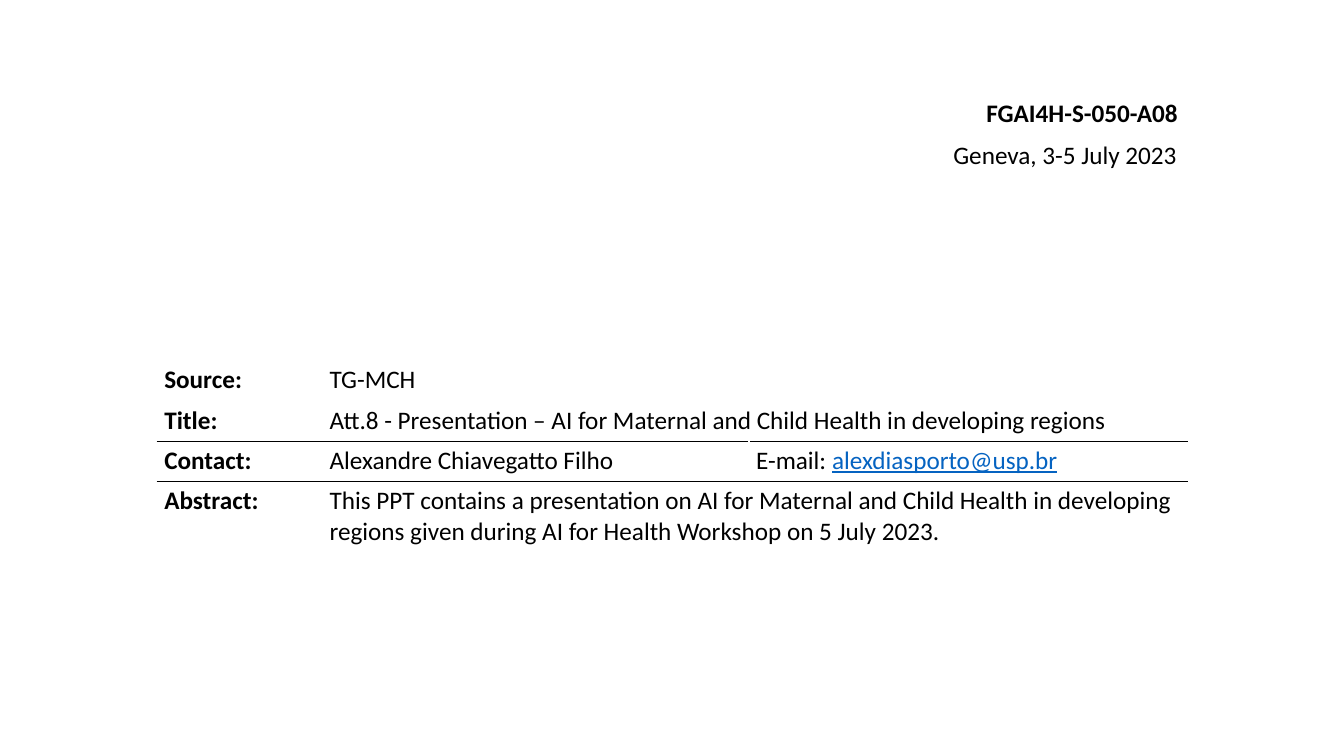
from dataclasses import dataclass

from lxml import etree
from pptx import Presentation
from pptx import util as u
from pptx.dml.color import RGBColor
from pptx.enum import text as t
from pptx.oxml import ns

BLACK, LINK = "000000", "0563C1"


@dataclass
class Run:
    text: str
    bold: bool = False
    underline: bool = False
    color: str = BLACK


@dataclass
class HeaderLine:
    left: float
    top: float
    width: float
    run: Run


@dataclass
class Row:
    label: str
    cells: list[list[Run]]
    height: float = 0.4
    rules: tuple[str, ...] = ()


HEADER = [
    HeaderLine(9.65, 0.92, 2.13, Run("FGAI4H-S-050-A08", bold=True)),
    HeaderLine(9.33, 1.33, 2.44, Run("Geneva, 3-5 July 2023")),
]
COLUMNS = [1.64, 4.23, 4.35]
ROWS = [
    Row("Source:", [[Run("TG-MCH")]]),
    Row("Title:", [[Run("Att.8 - Presentation – AI for Maternal and Child Health "
                        "in developing regions")]], rules=("lnB",)),
    Row("Contact:", [[Run("Alexandre Chiavegatto Filho")],
                     [Run("E-mail: "),
                      Run("alexdiasporto@usp.br", underline=True, color=LINK)]],
        rules=("lnT", "lnB")),
    Row("Abstract:", [[Run("This PPT contains a presentation on AI for Maternal and Child "
                           "Health in developing regions given during AI for Health "
                           "Workshop on 5 July 2023.")]], 0.68, ("lnT",)),
]


def set_color(color_format, value: str) -> None:
    color_format.rgb = RGBColor.from_string(value)


def write(tf, runs: list[Run]) -> None:
    p = tf.paragraphs[0]
    for run in runs:
        r = p.add_run()
        r.text = run.text
        formats = {"name": "Calibri", "size": u.Pt(18), "bold": run.bold,
                   "underline": run.underline}
        for name, value in formats.items():
            setattr(r.font, name, value)
        set_color(r.font.color, run.color)


def add_header_line(s, line: HeaderLine) -> None:
    box = s.shapes.add_textbox(u.Inches(line.left), u.Inches(line.top),
                               u.Inches(line.width), u.Inches(0.4))
    tf = box.text_frame
    tf.word_wrap = False
    tf.auto_size = t.MSO_AUTO_SIZE.SHAPE_TO_FIT_TEXT
    write(tf, [line.run])
    tf.paragraphs[0].alignment = t.PP_ALIGN.RIGHT


def add_rule(cell, side: str) -> None:
    tc_pr = cell._tc.get_or_add_tcPr()
    ln = etree.SubElement(tc_pr, ns.qn(f"a:{side}"), w=str(u.Pt(1)))
    fill = etree.SubElement(ln, ns.qn("a:solidFill"))
    etree.SubElement(fill, ns.qn("a:srgbClr"), val=BLACK)


def format_cell(cell, rules: tuple[str, ...]) -> None:
    margins = {"margin_left": 0.07, "margin_right": 0.07,
               "margin_top": 0.04, "margin_bottom": 0.04}
    for name, value in margins.items():
        setattr(cell, name, u.Inches(value))
    for side in rules:
        add_rule(cell, side)
    cell.fill.background()


def add_details_table(s) -> None:
    height = sum(row.height for row in ROWS)
    frame = s.shapes.add_table(len(ROWS), len(COLUMNS), u.Inches(1.56), u.Inches(3.58),
                               u.Inches(sum(COLUMNS)), u.Inches(height))
    table = frame.table
    table.first_row = table.horz_banding = False
    for column, width in zip(table.columns, COLUMNS):
        column.width = u.Inches(width)
    for i, row in enumerate(ROWS):
        table.rows[i].height = u.Inches(row.height)
        for j in range(len(COLUMNS)):
            format_cell(table.cell(i, j), row.rules)
        if len(row.cells) == 1:
            table.cell(i, 1).merge(table.cell(i, 2))
        for j, runs in enumerate([[Run(row.label, bold=True)], *row.cells]):
            write(table.cell(i, j).text_frame, runs)


def main() -> None:
    prs = Presentation()
    prs.slide_width, prs.slide_height = u.Inches(13.33), u.Inches(7.5)
    s = prs.slides.add_slide(prs.slide_layouts[6])

    # Document number and meeting
    for line in HEADER:
        add_header_line(s, line)

    # Document details
    add_details_table(s)
    prs.save("out.pptx")


if __name__ == "__main__":
    main()
